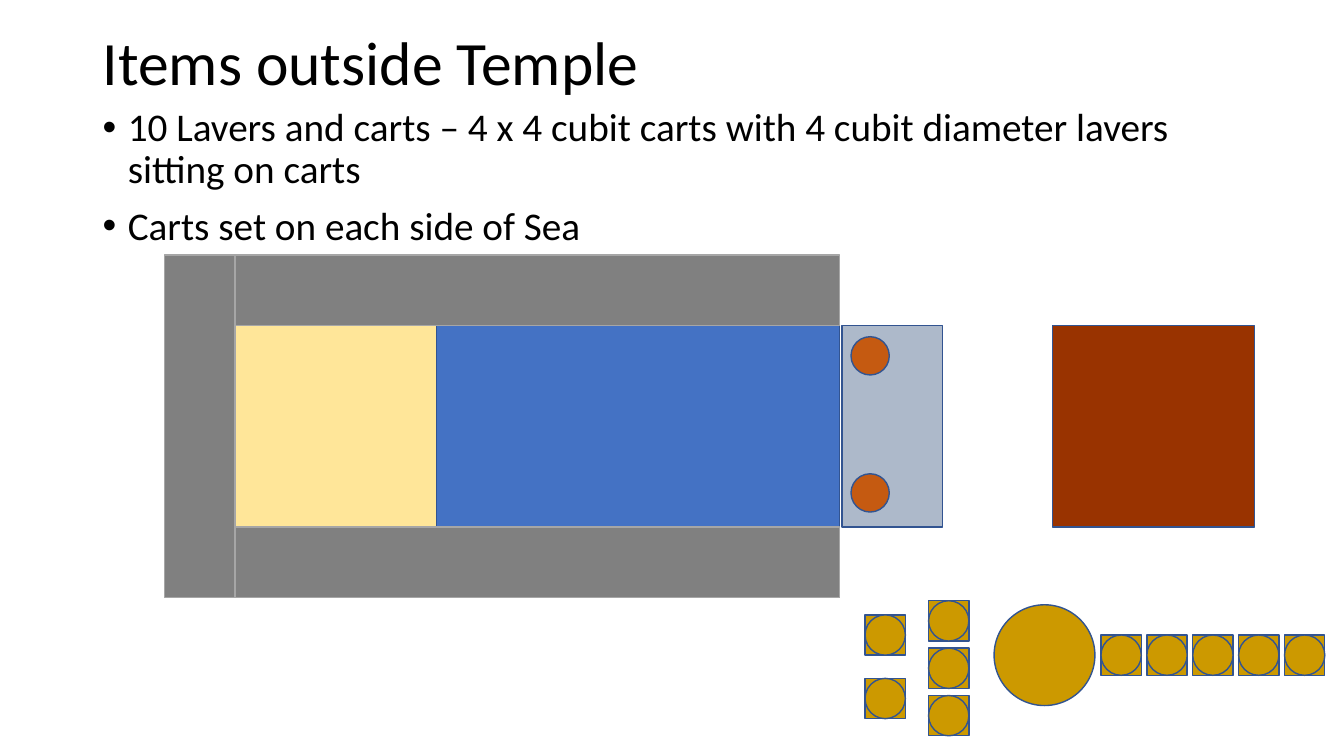
from dataclasses import dataclass

from lxml import etree
from pptx import Presentation
from pptx.dml.color import RGBColor
from pptx.enum.shapes import MSO_SHAPE
from pptx.enum.text import MSO_ANCHOR, PP_ALIGN
from pptx.oxml.ns import qn
from pptx.util import Inches, Pt

RECT = MSO_SHAPE.RECTANGLE
OVAL = MSO_SHAPE.OVAL
LEFT = PP_ALIGN.LEFT
MIDDLE = MSO_ANCHOR.MIDDLE
TITLE_ONLY = 5


@dataclass(frozen=True)
class Theme:
    font: str = "Calibri"
    title: int = 44
    body: int = 28
    ink: str = "000000"
    edge: str = "325491"
    rim: str = "A6A6A6"
    hall: str = "4472C4"
    porch: str = "ADB9CA"
    shrine: str = "FFE699"
    pillar: str = "C55A11"
    altar: str = "993300"
    bronze: str = "CC9900"
    rooms: str = "808080"


THEME = Theme()
UNIT = 2
WALL = 0.7
CART = 0.4
TEMPLE_X, TEMPLE_Y = 2.33, 3.23


def style(para, size):
    para.alignment = LEFT
    para.line_spacing = 0.9
    para.font.name = THEME.font
    para.font.size = Pt(size)
    para.font.color.rgb = RGBColor.from_string(THEME.ink)


def add_title(slide, text):
    title = slide.shapes.title
    title.left, title.top = Inches(0.92), Inches(-0.07)
    title.width, title.height = Inches(11.5), Inches(1.45)
    frame = title.text_frame
    frame.text = text
    frame.vertical_anchor = MIDDLE
    style(frame.paragraphs[0], THEME.title)


def add_list(slide, items):
    box = slide.shapes.add_textbox(
        Inches(0.92), Inches(1.02), Inches(11.5), Inches(1.5))
    frame = box.text_frame
    frame.word_wrap = True
    frame.text = "\n".join(items)
    for para in frame.paragraphs:
        style(para, THEME.body)
        para.space_before = Pt(10)
        props = para._p.get_or_add_pPr()
        props.set("marL", str(Inches(0.25)))
        props.set("indent", str(-Inches(0.25)))
        font = etree.Element(qn("a:buFont"), typeface="Arial")
        mark = etree.Element(qn("a:buChar"), char="•")
        props.find(qn("a:defRPr")).addprevious(font)
        font.addnext(mark)


def add_block(shapes, kind, x, y, w, h, fill, line=THEME.edge):
    block = shapes.add_shape(kind, Inches(x), Inches(y), Inches(w), Inches(h))
    block.shadow.inherit = False
    block.fill.solid()
    block.fill.fore_color.rgb = RGBColor.from_string(fill)
    block.line.color.rgb = RGBColor.from_string(line)
    block.line.width = Pt(1)


def add_cart(slide, x, y):
    group = slide.shapes.add_group_shape()
    for kind in (RECT, OVAL):
        add_block(group.shapes, kind, x, y, CART, CART, THEME.bronze)


def add_temple(slide):
    shapes = slide.shapes
    x, y, length = TEMPLE_X, TEMPLE_Y, 3 * UNIT
    add_block(shapes, RECT, x, y, length, UNIT, THEME.hall)
    add_block(shapes, RECT, 8.35, y, UNIT / 2, UNIT, THEME.porch)
    add_block(shapes, RECT, x, y, UNIT, UNIT, THEME.shrine)
    for top in (3.34, 4.7):
        add_block(shapes, OVAL, 8.44, top, 0.38, 0.38, THEME.pillar)
    for top in (y - WALL, y + UNIT):
        add_block(shapes, RECT, x, top, length, WALL, THEME.rooms, THEME.rim)
    add_block(shapes, RECT, x - WALL, y - WALL, WALL, UNIT + 2 * WALL,
              THEME.rooms, THEME.rim)


def add_court(slide):
    add_block(slide.shapes, RECT, 10.44, TEMPLE_Y, UNIT, UNIT, THEME.altar)
    add_block(slide.shapes, OVAL, 9.86, 6, 1, 1, THEME.bronze)
    for row in range(2):
        add_cart(slide, 8.58, 6.1 + 0.63 * row)
    for row in range(3):
        add_cart(slide, 9.21, 5.96 + 0.47 * row)
    for col in range(5):
        add_cart(slide, 10.92 + 0.455 * col, 6.3)


def main():
    deck = Presentation()
    deck.slide_width, deck.slide_height = Inches(13.33), Inches(7.5)
    slide = deck.slides.add_slide(deck.slide_layouts[TITLE_ONLY])
    add_title(slide, "Items outside Temple")
    add_list(slide, (
        "10 Lavers and carts – 4 x 4 cubit carts with 4 cubit diameter "
        "lavers sitting on carts",
        "Carts set on each side of Sea",
    ))
    add_temple(slide)
    add_court(slide)
    deck.save("out.pptx")


if __name__ == "__main__":
    main()
